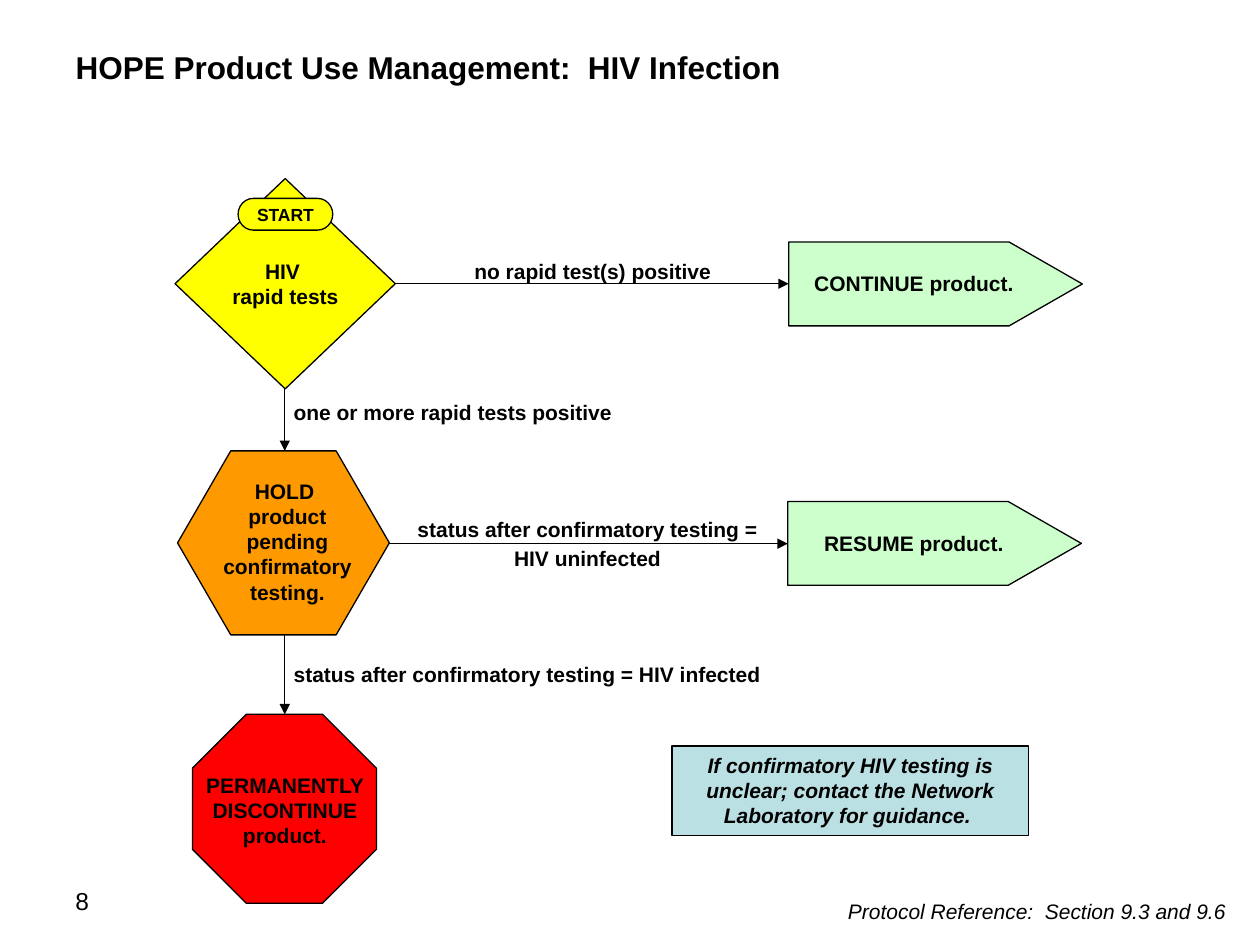
from lxml import etree
from pptx import Presentation
from pptx.dml.color import RGBColor
from pptx.enum.shapes import MSO_CONNECTOR, MSO_SHAPE
from pptx.enum.text import MSO_ANCHOR, MSO_AUTO_SIZE, PP_ALIGN
from pptx.oxml.ns import qn
from pptx.util import Cm, Pt

LEFT, CENTER, RIGHT = PP_ALIGN.LEFT, PP_ALIGN.CENTER, PP_ALIGN.RIGHT
TOP, MIDDLE = MSO_ANCHOR.TOP, MSO_ANCHOR.MIDDLE
NO_AUTOFIT = MSO_AUTO_SIZE.NONE
STRAIGHT = MSO_CONNECTOR.STRAIGHT
DIAMOND, HEXAGON, OCTAGON = MSO_SHAPE.DIAMOND, MSO_SHAPE.HEXAGON, MSO_SHAPE.OCTAGON
PENTAGON, RECTANGLE = MSO_SHAPE.PENTAGON, MSO_SHAPE.RECTANGLE
TERMINATOR = MSO_SHAPE.FLOWCHART_TERMINATOR

BLACK = RGBColor(0x00, 0x00, 0x00)
YELLOW = RGBColor(0xFF, 0xFF, 0x00)
ORANGE = RGBColor(0xFF, 0x99, 0x00)
RED = RGBColor(0xFF, 0x00, 0x00)
GREEN = RGBColor(0xCC, 0xFF, 0xCC)
BLUE = RGBColor(0xBB, 0xE0, 0xE3)

FONT = "Arial"
LINE_WIDTH = Pt(0.75)

TITLE = "HOPE Product Use Management:  HIV Infection"
TITLE_PLACE = (1.27, 0.84, 22.86, 1.02)

# kind, (left, top, width, height) in cm, fill, adjustment
STEPS = [
    (DIAMOND, (3.53, 3.6, 4.44, 4.24), YELLOW, None),
    (HEXAGON, (3.58, 9.09, 4.27, 3.71), ORANGE, 0.289),
    (OCTAGON, (3.88, 14.4, 3.71, 3.81), RED, 0.293),
    (PENTAGON, (15.9, 4.88, 5.92, 1.69), GREEN, 0.873),
    (PENTAGON, (15.88, 10.11, 5.92, 1.69), GREEN, 0.873),
]

START = ["START"]
START_PLACE = (4.8, 4, 1.91, 0.64)
NOTE = ["If confirmatory HIV testing is unclear; contact the Network "
        "Laboratory for guidance. "]
NOTE_PLACE = (13.55, 15.04, 7.19, 1.8)

ARROWS = [
    ((7.97, 5.72), (15.9, 5.72)),
    ((7.84, 10.96), (15.88, 10.96)),
    ((5.74, 7.84), (5.74, 9.09)),
    ((5.74, 12.8), (5.74, 14.4)),
]

STEP_TEXTS = [
    (["HIV ", "rapid tests"], (3.56, 5.08, 4.39, 1.27)),
    (["HOLD ", "product", "pending confirmatory testing."], (3.61, 9.52, 4.37, 2.79)),
    (["PERMANENTLY DISCONTINUE product."], (3.66, 15.45, 4.17, 1.78)),
    (["CONTINUE product."], (15.67, 5.33, 5.51, 0.76)),
    (["RESUME product."], (15.67, 10.57, 5.51, 0.76)),
]
ACROSS_LABELS = [
    (["no rapid test(s) positive"], (7.82, 5.08, 8.26, 0.76)),
    (["status after confirmatory testing =", "HIV uninfected"], (7.82, 10.29, 8.05, 1.35)),
]
DOWN_LABELS = [
    (["one or more rapid tests positive"], (5.92, 7.92, 7.19, 0.76)),
    (["status after confirmatory testing = HIV infected"], (5.92, 13.21, 12.07, 0.76)),
]
PAGE_NUMBER = (["8"], (1.27, 17.73, 5.92, 1.32))
REFERENCE = (["Protocol Reference:  Section 9.3 and 9.6"], (15.44, 17.98, 9.53, 0.76))


def lengths(place):
    return [Cm(value) for value in place]


def write(frame, lines, size=12, bold=True, italic=False, align=CENTER,
          anchor=TOP, after=0):
    frame.word_wrap = True
    frame.auto_size = NO_AUTOFIT
    frame.vertical_anchor = anchor
    for index, line in enumerate(lines):
        para = frame.add_paragraph() if index else frame.paragraphs[0]
        para.text = line
        para.alignment = align
        para.space_before = Pt(0)
        para.space_after = Pt(after)
        para.font.name = FONT
        para.font.size = Pt(size)
        para.font.bold = bold
        para.font.italic = italic
        para.font.color.rgb = BLACK


def add_box(page, lines, place, **style):
    box = page.shapes.add_textbox(*lengths(place))
    write(box.text_frame, lines, **style)
    return box


def add_step(page, kind, place, fill, adjustment=None):
    step = page.shapes.add_shape(kind, *lengths(place))
    step.shadow.inherit = False
    step.fill.solid()
    step.fill.fore_color.rgb = fill
    step.line.color.rgb = BLACK
    step.line.width = LINE_WIDTH
    if adjustment is not None:
        step.adjustments[0] = adjustment
    return step


def add_arrow(page, start, end):
    arrow = page.shapes.add_connector(STRAIGHT, *lengths(start + end))
    arrow.line.color.rgb = BLACK
    arrow.line.width = LINE_WIDTH
    etree.SubElement(arrow.line._get_or_add_ln(), qn("a:tailEnd"), type="triangle")
    etree.SubElement(arrow._element.spPr, qn("a:effectLst"))


def main():
    deck = Presentation()
    deck.slide_width, deck.slide_height = Cm(25.4), Cm(19.05)
    page = deck.slides.add_slide(deck.slide_layouts[5])

    title = page.shapes.title
    title.left, title.top, title.width, title.height = lengths(TITLE_PLACE)
    write(title.text_frame, [TITLE], size=18, align=LEFT)

    for step in STEPS:
        add_step(page, *step)
    for arrow in ARROWS:
        add_arrow(page, *arrow)
    for lines, place in STEP_TEXTS:
        add_box(page, lines, place)
    for lines, place in ACROSS_LABELS:
        add_box(page, lines, place, after=2)
    for lines, place in DOWN_LABELS:
        add_box(page, lines, place, align=LEFT).text_frame.margin_left = 0

    start = add_step(page, TERMINATOR, START_PLACE, YELLOW)
    start.text_frame.margin_left = start.text_frame.margin_right = 0
    write(start.text_frame, START, size=10, anchor=MIDDLE)
    note = add_step(page, RECTANGLE, NOTE_PLACE, BLUE)
    write(note.text_frame, NOTE, italic=True)

    add_box(page, *PAGE_NUMBER, size=14, bold=False, align=LEFT)
    add_box(page, *REFERENCE, bold=False, italic=True, align=RIGHT)
    deck.save("out.pptx")


if __name__ == "__main__":
    main()
